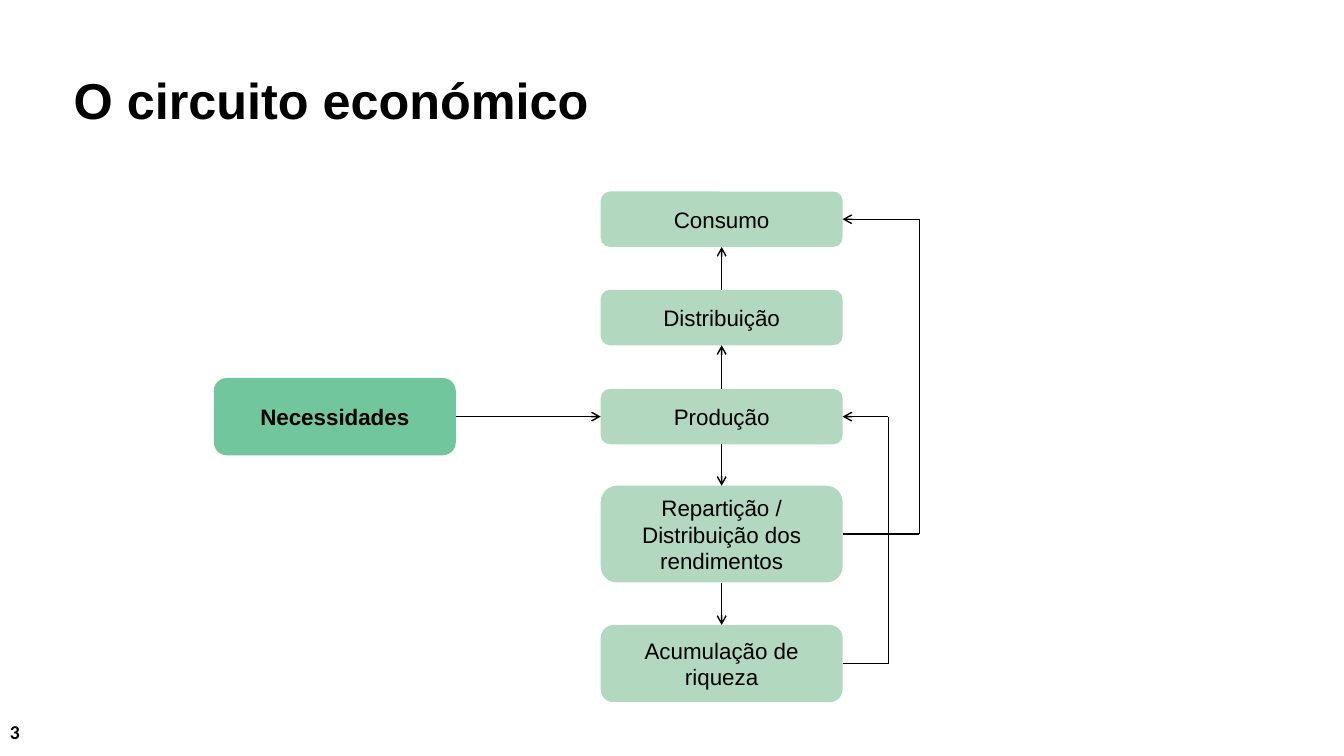
from pptx import Presentation
from pptx.dml.color import RGBColor
from pptx.enum import shapes, text
from pptx.util import Pt
from lxml import etree

# Content
TITLE = "O circuito económico"
PAGE = "3"
COLOURS = {"ink": "000000", "need": "71C69D", "stage": "B2D9C0"}
NEED = "Necessidades"
# Stage, top, height
STAGES = [
    ("Consumo", 136.8, 39.6),
    ("Distribuição", 207, 39.6),
    ("Produção", 277.8, 39.6),
    ("Repartição / Distribuição dos rendimentos", 347, 69.1),
    ("Acumulação de riqueza", 446.4, 55.2),
]
# From, side, to, side (0 top, 1 left, 2 bottom, 3 right)
FLOWS = [
    (NEED, 3, "Produção", 1),
    ("Produção", 0, "Distribuição", 2),
    ("Distribuição", 0, "Consumo", 2),
    ("Produção", 2, STAGES[3][0], 0),
    (STAGES[3][0], 2, "Acumulação de riqueza", 0),
]
# From, to, x of the vertical part
RETURNS = [
    ("Acumulação de riqueza", "Produção", 634.5),
    (STAGES[3][0], "Consumo", 656.6),
]
NEED_LEFT, STAGE_LEFT, BOX_WIDTH = 152.8, 429.1, 172.8
NEED_TOP, NEED_HEIGHT = 270, 55.2

deck = Presentation()
deck.slide_width, deck.slide_height = Pt(960), Pt(540)
slide = deck.slides.add_slide(deck.slide_layouts[5])


def rgb(name):
    return RGBColor.from_string(COLOURS[name])


def write(frame, words, size, font="Arial", bold=False, align=text.PP_ALIGN.LEFT):
    frame.word_wrap = True
    paragraph = frame.paragraphs[0]
    paragraph.alignment = align
    run = paragraph.add_run()
    run.text = words
    run.font.name, run.font.size, run.font.bold = font, Pt(size), bold
    run.font.color.rgb = rgb("ink")
    return paragraph


def add_box(words, left, top, height, fill, bold=False):
    box = slide.shapes.add_shape(shapes.MSO_SHAPE.ROUNDED_RECTANGLE,
                                 Pt(left), Pt(top), Pt(BOX_WIDTH), Pt(height))
    box.shadow.inherit = False
    box.fill.solid()
    box.fill.fore_color.rgb = rgb(fill)
    box.line.fill.background()
    box.text_frame.vertical_anchor = text.MSO_ANCHOR.MIDDLE
    write(box.text_frame, words, 16, bold=bold, align=text.PP_ALIGN.CENTER)
    return box


def add_line(x1=0, y1=0, x2=0, y2=0, arrow=True):
    line = slide.shapes.add_connector(shapes.MSO_CONNECTOR.STRAIGHT, x1, y1, x2, y2)
    line.line.color.rgb = rgb("ink")
    line.line.width = Pt(1)
    properties = line.line._get_or_add_ln()
    namespace = "{%s}" % properties.nsmap["a"]
    if arrow:
        etree.SubElement(properties, namespace + "tailEnd", type="arrow")
    etree.SubElement(properties.getparent(), namespace + "effectLst")
    return line


# Title and page number
title = slide.shapes.title
title.left, title.top, title.width, title.height = Pt(45.4), Pt(50.4), Pt(840.2), Pt(75.6)
title.text_frame.vertical_anchor = text.MSO_ANCHOR.TOP
write(title.text_frame, TITLE, 36, bold=True).line_spacing = 0.9
page = slide.shapes.add_textbox(Pt(0), Pt(510.5), Pt(216), Pt(28.8))
write(page.text_frame, PAGE, 14, font="Calibri", bold=True)

# Boxes
boxes = {NEED: add_box(NEED, NEED_LEFT, NEED_TOP, NEED_HEIGHT, "need", bold=True)}
for stage, top, height in STAGES:
    boxes[stage] = add_box(stage, STAGE_LEFT, top, height, "stage")

# Straight flows
for source, source_side, target, target_side in FLOWS:
    flow = add_line()
    flow.begin_connect(boxes[source], source_side)
    flow.end_connect(boxes[target], target_side)

# Return flows on the right
for source, target, x in RETURNS:
    turn = Pt(x)
    start_y, end_y = (boxes[name].top + boxes[name].height // 2 for name in (source, target))
    way_out = add_line(x2=turn, y2=start_y, arrow=False)
    way_out.begin_connect(boxes[source], 3)
    add_line(turn, start_y, turn, end_y, arrow=False)
    way_back = add_line(x1=turn, y1=end_y)
    way_back.end_connect(boxes[target], 3)

deck.save("out.pptx")
